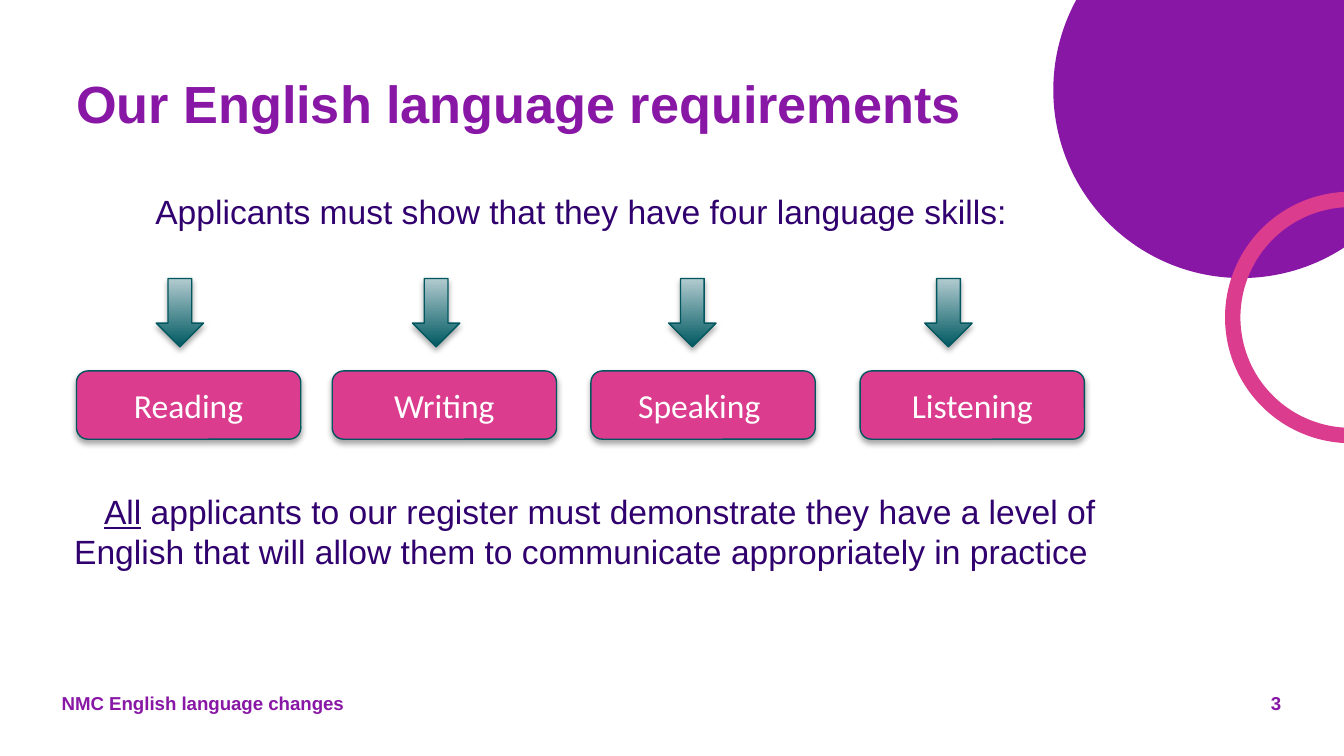
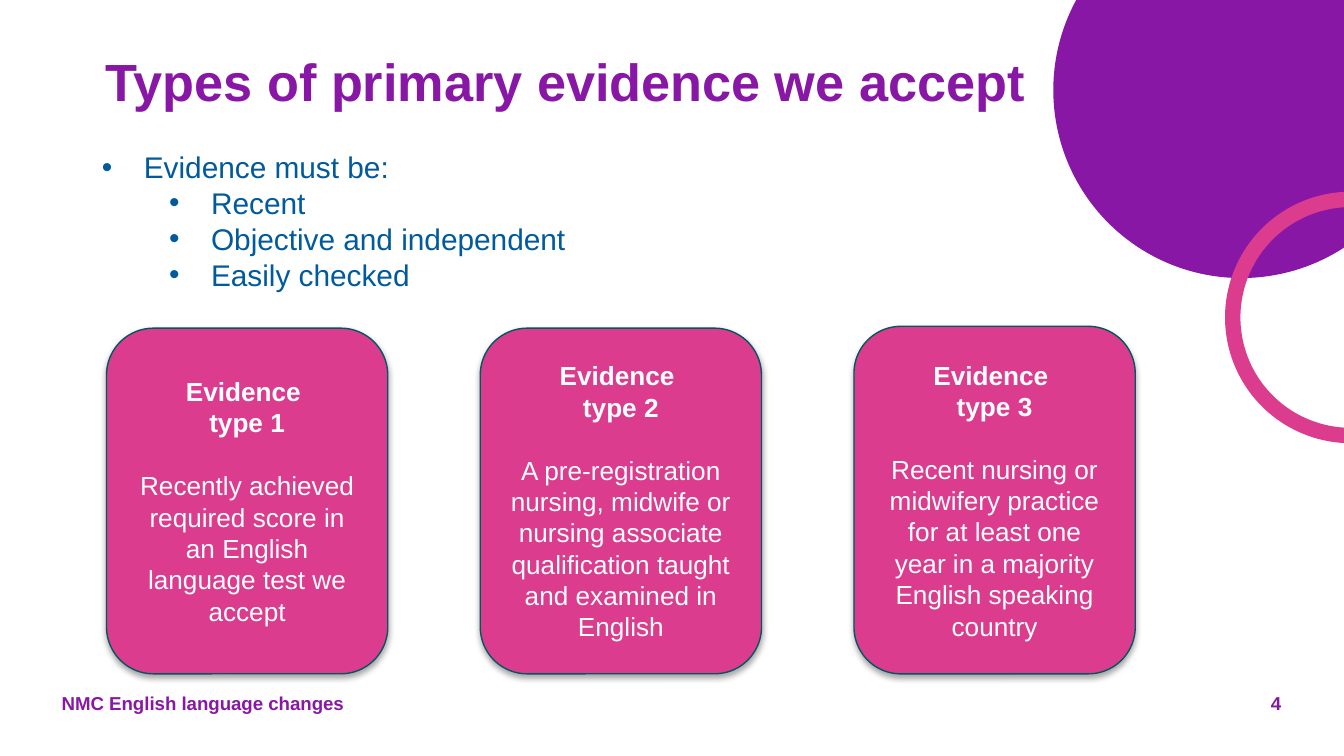
import lxml.etree
import pptx
import pptx.dml.color
import pptx.enum.shapes
import pptx.enum.text
import pptx.oxml
import pptx.oxml.ns
import pptx.util

Pt = pptx.util.Pt
RGBColor = pptx.dml.color.RGBColor
ALIGN = pptx.enum.text.PP_ALIGN
SHAPE = pptx.enum.shapes.MSO_SHAPE
qn = pptx.oxml.ns.qn

PURPLE = RGBColor(0x89, 0x17, 0xA6)
PINK = RGBColor(0xDB, 0x3C, 0x8E)
INDIGO = RGBColor(0x31, 0x00, 0x6F)
BLUE = RGBColor(0x00, 0x5A, 0x9B)
TEAL_EDGE = RGBColor(0x00, 0x57, 0x5F)
TEAL_DARK = RGBColor(0x00, 0x59, 0x61)
TEAL_LIGHT = RGBColor(0xB2, 0xCB, 0xD0)
WHITE = RGBColor(0xFF, 0xFF, 0xFF)

SHADOW = (
    f'<a:outerShdw {pptx.oxml.ns.nsdecls("a")} blurRad="40000" dist="23000" '
    'dir="5400000" rotWithShape="0"><a:srgbClr val="000000">'
    '<a:alpha val="35000"/></a:srgbClr></a:outerShdw>'
)


class Deck:
    """Build slides that share one style."""

    def __init__(self):
        self.presentation = pptx.Presentation()
        self.presentation.slide_width = Pt(720)
        self.presentation.slide_height = Pt(405)
        self.slide = None

    def start(self, number):
        self.slide = self.presentation.slides.add_slide(self.presentation.slide_layouts[6])
        disc = self.shape(SHAPE.OVAL, 564.3, -52.5, 201.5, 201.5)
        disc.fill.solid()
        disc.fill.fore_color.rgb = PURPLE
        disc.line.fill.background()
        ring = self.shape(SHAPE.OVAL, 660.4, 106.8, 126.5, 126.5)
        ring.fill.background()
        ring.line.color.rgb = PINK
        ring.line.width = Pt(8.25)
        self.footer(26, 246, "NMC English language changes", ALIGN.LEFT)
        self.footer(537, 156.4, str(number), ALIGN.RIGHT)

    def shape(self, preset, left, top, width, height):
        shape = self.slide.shapes.add_shape(preset, Pt(left), Pt(top), Pt(width), Pt(height))
        shape.shadow.inherit = False
        return shape

    def raised(self, preset, left, top, width, height):
        shape = self.shape(preset, left, top, width, height)
        shape.line.color.rgb = TEAL_EDGE
        shape.line.width = Pt(0.75)
        effects = shape._element.spPr.find(qn("a:effectLst"))
        effects.append(pptx.oxml.parse_xml(SHADOW))
        return shape

    def style(self, paragraph, size, color, bold=False, align=ALIGN.LEFT, font="Arial"):
        paragraph.alignment = align
        for run in paragraph.runs:
            run.font.name = font
            run.font.size = Pt(size)
            run.font.bold = bold
            run.font.color.rgb = color

    def text(self, left, top, width, height, content):
        box = self.slide.shapes.add_textbox(Pt(left), Pt(top), Pt(width), Pt(height))
        box.text_frame.word_wrap = True
        box.text_frame.text = content
        return box.text_frame

    def title(self, left, top, width, height, content, align):
        heading = self.text(left, top, width, height, content)
        self.style(heading.paragraphs[0], 28, PURPLE, True, align)

    def footer(self, left, width, content, align):
        line = self.text(left, 373, width, 12, content).paragraphs[0]
        line.line_spacing = Pt(6)
        self.style(line, 10, PURPLE, True, align)

    def panel(self, left, top, width, height, content):
        panel = self.raised(SHAPE.ROUNDED_RECTANGLE, left, top, width, height)
        panel.fill.solid()
        panel.fill.fore_color.rgb = PINK
        panel.text_frame.word_wrap = True
        panel.text_frame.vertical_anchor = pptx.enum.text.MSO_ANCHOR.MIDDLE
        panel.text_frame.text = content
        return panel.text_frame.paragraphs

    def skill(self, left, name):
        label = self.panel(left, 198.7, 120.2, 36.6, name)[0]
        self.style(label, 18, WHITE, align=ALIGN.CENTER, font="Calibri")

    def arrow(self, left):
        arrow = self.raised(SHAPE.DOWN_ARROW, left, 149.2, 25.4, 36.6)
        arrow.fill.gradient()
        arrow.fill.gradient_angle = 90
        for stop, color, position in zip(arrow.fill.gradient_stops, (TEAL_DARK, TEAL_LIGHT), (0, 1)):
            stop.color.rgb = color
            stop.position = position

    def card(self, left, top, height, kind, detail):
        paragraphs = self.panel(left, top, 150.7, height, f"Evidence \n{kind}\n{detail}")
        for paragraph in paragraphs:
            self.style(paragraph, 14, WHITE, paragraph is not paragraphs[-1], ALIGN.CENTER)
        paragraphs[-1].space_before = Pt(16.8)

    def statement(self, intro, stressed, rest):
        frame = self.text(12.2, 98.6, 598.3, 220, intro)
        closing = frame.add_paragraph()
        closing.space_before = Pt(139)
        closing._p.get_or_add_pPr().set("indent", str(Pt(20)))
        for part in (stressed, rest):
            closing.add_run().text = part
        closing.runs[0].font.underline = True
        for paragraph in frame.paragraphs:
            self.style(paragraph, 18, INDIGO, align=ALIGN.CENTER)

    def bullets(self, left, top, width, height, items):
        frame = self.text(left, top, width, height, "\n".join(name for name, _ in items))
        for paragraph, (_, level) in zip(frame.paragraphs, items):
            paragraph.level = level
            properties = paragraph._p.get_or_add_pPr()
            properties.set("marL", str(Pt(22.5 + 36 * level)))
            properties.set("indent", str(-Pt(22.5)))
            lxml.etree.SubElement(properties, qn("a:buFont")).set("typeface", "Arial")
            lxml.etree.SubElement(properties, qn("a:buChar")).set("char", "•")
            self.style(paragraph, 16, BLUE)


def requirements(deck):
    deck.start(3)
    deck.title(33.8, 34.6, 529, 42.5, "Our English language requirements", ALIGN.LEFT)
    deck.statement(
        "Applicants must show that they have four language skills:",
        "All",
        " applicants to our register must demonstrate they have a level of "
        "English that will allow them to communicate appropriately in practice",
    )
    skills = (("Reading", 41), ("Writing", 178), ("Speaking ", 316.6), ("Listening", 460.8))
    for column, (name, left) in enumerate(skills):
        deck.skill(left, name)
        deck.arrow(83.7 + 137.25 * column)


def evidence(deck):
    deck.start(4)
    deck.title(47.5, 23, 510.5, 51, "Types of primary evidence we accept", ALIGN.CENTER)
    deck.bullets(47.5, 76.3, 535.7, 85, (
        ("Evidence must be:", 0),
        ("Recent", 1),
        ("Objective and independent", 1),
        ("Easily checked", 1),
    ))
    cards = (
        (175.8, 185.2, "Recently achieved required score in an English language test we accept"),
        (175.8, 185.2, "A pre-registration nursing, midwife or nursing associate "
                       "qualification taught and examined in English"),
        (174.8, 186.2, "Recent nursing or midwifery practice for at least one year "
                       "in a majority English speaking country"),
    )
    for column, (top, height, detail) in enumerate(cards):
        deck.card(57.1 + 200.2 * column, top, height, f"type {column + 1}", detail)


def main():
    deck = Deck()
    requirements(deck)
    evidence(deck)
    deck.presentation.save("out.pptx")


if __name__ == "__main__":
    main()
